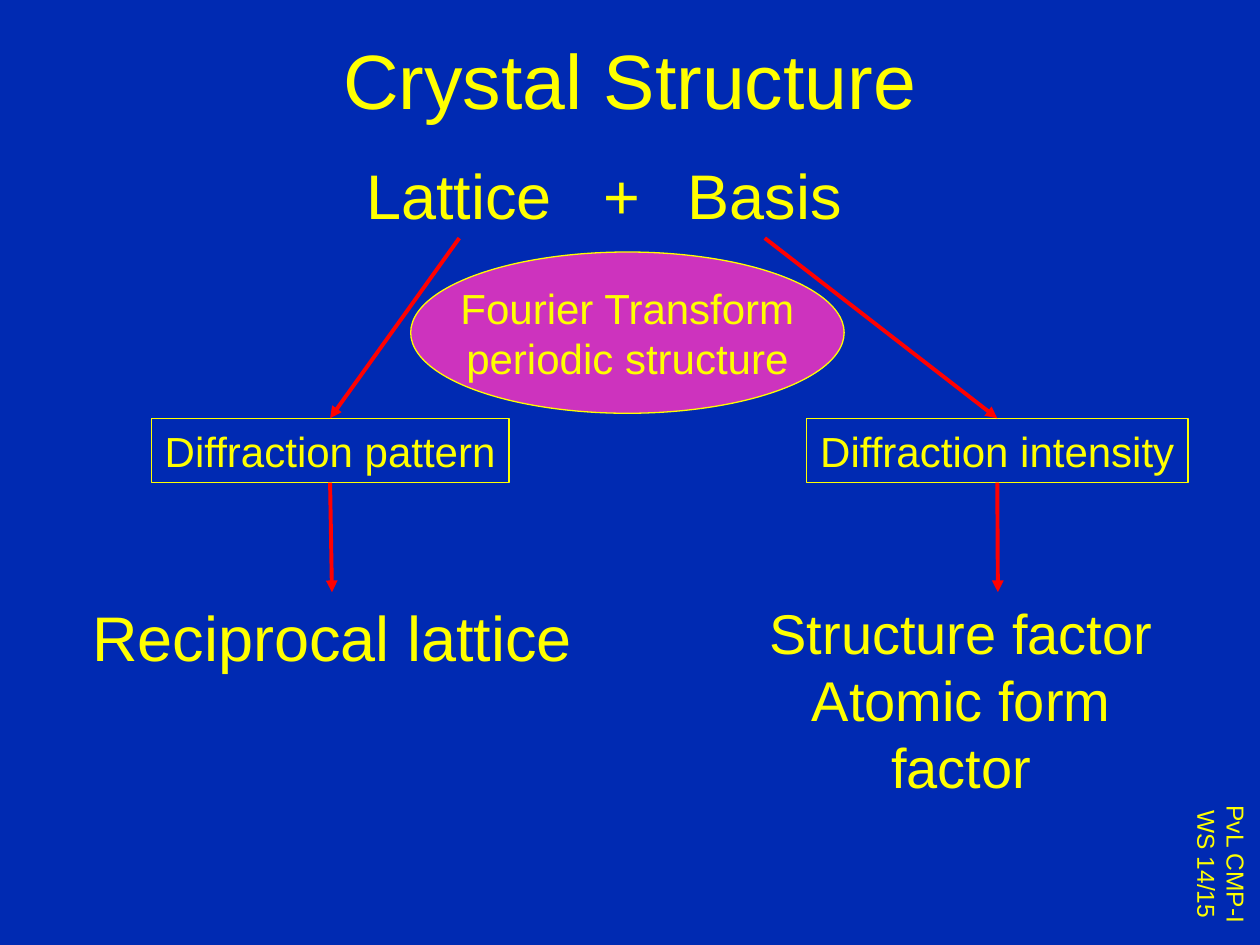
from pptx import Presentation
from pptx.dml.color import RGBColor
from pptx.enum.shapes import MSO_CONNECTOR as LINK, MSO_SHAPE as SHAPE
from pptx.enum.text import MSO_ANCHOR as ANCHOR, PP_ALIGN as ALIGN
from pptx.oxml.ns import qn
from pptx.util import Inches, Pt
from lxml import etree

COLORS = {name: RGBColor.from_string(value) for name, value in {
    "background": "002AB2", "text": "FFFF00", "arrow": "FF0000", "ellipse": "CD33BE",
}.items()}

# Grid of 100 columns by 75 rows
CELL = Inches(0.1)

deck = Presentation()
deck.slide_width, deck.slide_height = 100 * CELL, 75 * CELL
slide = deck.slides.add_slide(deck.slide_layouts[6])
slide.background.fill.solid()
slide.background.fill.fore_color.rgb = COLORS["background"]


def add_label(text, place, size, outline=None, fill=None):
    """Centred text at (column, row, columns, rows), plain or in an outlined shape."""
    box = [round(cells * CELL) for cells in place]
    if outline is None:
        label = slide.shapes.add_textbox(*box)
    else:
        label = slide.shapes.add_shape(outline, *box)
        label.shadow.inherit = False
        label.line.color.rgb = COLORS["text"]
        label.line.width = Pt(0.75)
        if fill is None:
            label.fill.background()
        else:
            label.fill.solid()
            label.fill.fore_color.rgb = fill
    frame = label.text_frame
    frame.text = text
    frame.word_wrap = False
    frame.vertical_anchor = ANCHOR.TOP if outline is None else ANCHOR.MIDDLE
    for paragraph in frame.paragraphs:
        paragraph.alignment = ALIGN.CENTER
        for run in paragraph.runs:
            run.font.name = "Arial"
            run.font.size = Pt(size)
            run.font.color.rgb = COLORS["text"]
    return label


def add_arrow(start, end):
    """Arrow from the bottom of one label to the top of another."""
    arrow = slide.shapes.add_connector(LINK.STRAIGHT, 0, 0, 0, 0)
    arrow.begin_connect(start, 2)
    arrow.end_connect(end, 0)
    arrow.line.color.rgb = COLORS["arrow"]
    arrow.line.width = Pt(2.25)
    etree.SubElement(arrow.line._get_or_add_ln(), qn("a:tailEnd"), type="triangle")
    etree.SubElement(arrow._element.spPr, qn("a:effectLst"))


# Course mark, reading downwards in the corner
course = add_label("PvL CMP-I\nWS 14/15", (93.1, 63.4, 6.7, 10.4), 14)
course.text_frame._txBody.bodyPr.set("vert", "vert")

# Title
title = add_label("Crystal Structure", (7.5, 0, 85, 12.5), 44)
title.text_frame.vertical_anchor = ANCHOR.MIDDLE

# Lattice + Basis
lattice = add_label("Lattice", (28.1, 11.9, 16.7, 7), 36)
add_label("+", (46.9, 11.9, 4.9, 7), 36)
basis = add_label("Basis", (53.6, 11.9, 14.2, 7), 36)

# What is measured
pattern = add_label("Diffraction pattern", (12, 33.2, 28.4, 5.1), 24, SHAPE.RECTANGLE)
intensity = add_label("Diffraction intensity", (64, 33.2, 30.3, 5.1), 24, SHAPE.RECTANGLE)

# What it tells
reciprocal = add_label("Reciprocal lattice", (6.3, 47, 40.1, 7), 36)
factors = add_label("Structure factor\nAtomic form factor", (60.2, 47, 38, 11.7), 32)
factors.text_frame.word_wrap = True
factors.text_frame.margin_left = Inches(0.05)
factors.text_frame.margin_right = Inches(0.63)

# Arrows down each branch
for source, measured, result in ((lattice, pattern, reciprocal), (basis, intensity, factors)):
    add_arrow(source, measured)
    add_arrow(measured, result)

# Fourier transform between the branches
add_label("Fourier Transform\nperiodic structure", (32.6, 20, 34.4, 12.8), 24,
          SHAPE.OVAL, COLORS["ellipse"])

deck.save("out.pptx")
